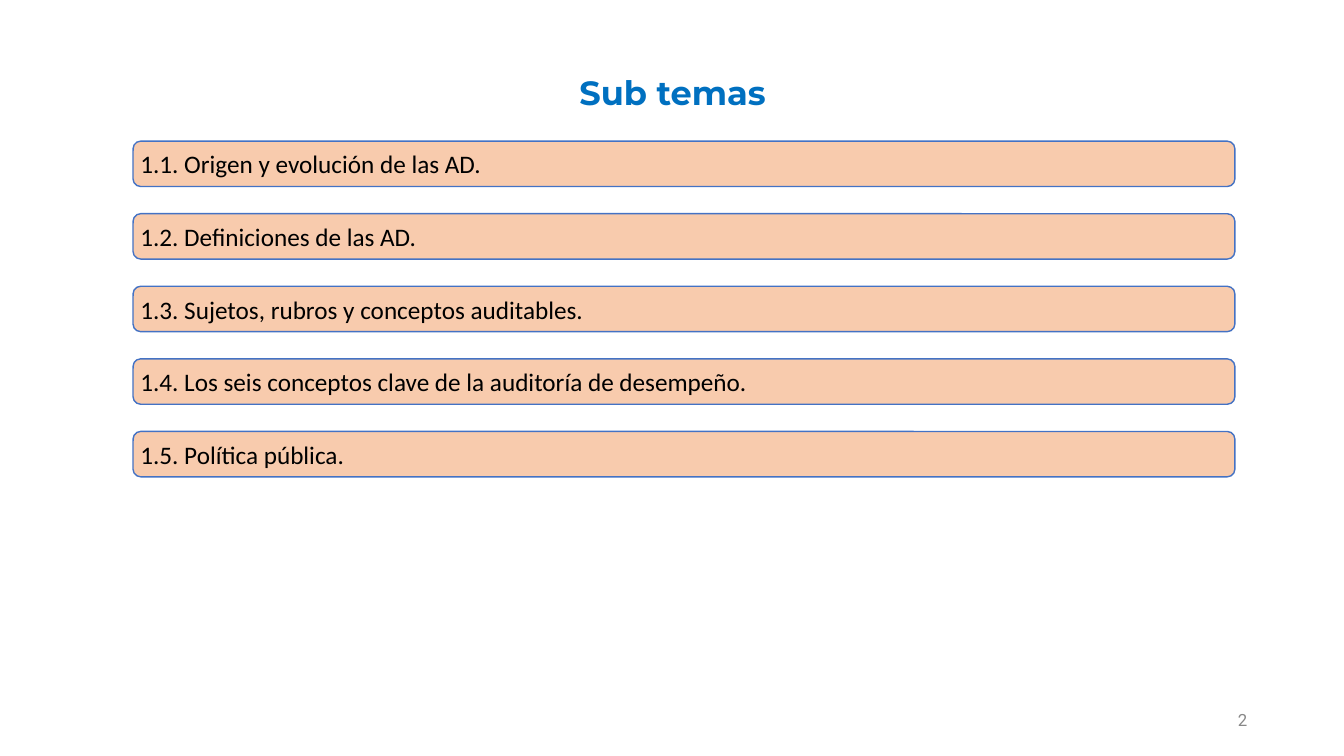
from pptx import Presentation
from pptx.dml.color import RGBColor
from pptx.enum.shapes import MSO_SHAPE
from pptx.enum.text import MSO_ANCHOR, MSO_AUTO_SIZE, PP_ALIGN
from pptx.util import Inches, Pt

BLUE = RGBColor(0x00, 0x70, 0xC0)
OUTLINE = RGBColor(0x44, 0x72, 0xC4)
PEACH = RGBColor(0xF8, 0xCB, 0xAD)
BLACK = RGBColor(0x00, 0x00, 0x00)
GRAY = RGBColor(0x88, 0x88, 0x88)

TOPICS = [
    "1.1. Origen y evolución de las AD.",
    "1.2. Definiciones de las AD.",
    "1.3. Sujetos, rubros y conceptos auditables.",
    "1.4. Los seis conceptos clave de la auditoría de desempeño.",
    "1.5. Política pública.",
]
BAR_LEFT, BAR_TOP, BAR_WIDTH, BAR_HEIGHT, BAR_PITCH = 9.9, 18.67, 81.98, 6, 9.6


class TopicSlide:
    FONTS = {
        "title": {"name": "Montserrat", "size": Pt(24), "bold": True},
        "topic": {"name": "Calibri", "size": Pt(18)},
        "number": {"name": "Roboto", "size": Pt(12)},
    }
    COLORS = {"title": BLUE, "topic": BLACK, "number": GRAY}
    PARAGRAPHS = {
        "title": {"alignment": PP_ALIGN.CENTER, "line_spacing": 0.9},
        "topic": {"alignment": PP_ALIGN.LEFT},
        "number": {"alignment": PP_ALIGN.RIGHT},
    }
    INSETS = {f"margin_{side}": Inches(0.05) for side in ("left", "top", "right", "bottom")}
    MIDDLE = {"vertical_anchor": MSO_ANCHOR.MIDDLE, **INSETS}
    FRAMES = {
        "title": {"word_wrap": True},
        "topic": {"word_wrap": True, **MIDDLE},
        "number": {"word_wrap": False, **MIDDLE},
    }

    def __init__(self, prs):
        self.width, self.height = prs.slide_width, prs.slide_height
        self.shapes = prs.slides.add_slide(prs.slide_layouts[6]).shapes

    def box(self, left, top, width, height):
        return (
            round(self.width * left / 100),
            round(self.height * top / 100),
            round(self.width * width / 100),
            round(self.height * height / 100),
        )

    def style(self, target, values):
        for name, value in values.items():
            setattr(target, name, value)

    def fill_text(self, sp, text, role):
        tf = sp.text_frame
        tf.auto_size = MSO_AUTO_SIZE.SHAPE_TO_FIT_TEXT
        self.style(tf, self.FRAMES[role])
        p = tf.paragraphs[0]
        self.style(p, self.PARAGRAPHS[role])
        r = p.add_run()
        r.text = text
        self.style(r.font, self.FONTS[role])
        r.font.color.rgb = self.COLORS[role]

    def label(self, text, role, *area):
        self.fill_text(self.shapes.add_textbox(*self.box(*area)), text, role)

    def bar(self, text, *area):
        sp = self.shapes.add_shape(MSO_SHAPE.ROUNDED_RECTANGLE, *self.box(*area))
        sp.shadow.inherit = False
        sp.fill.solid()
        sp.fill.fore_color.rgb = PEACH
        sp.line.color.rgb = OUTLINE
        sp.line.width = Pt(1)
        self.fill_text(sp, text, "topic")


def main():
    prs = Presentation()
    prs.slide_width, prs.slide_height = Inches(13.33), Inches(7.5)
    s = TopicSlide(prs)
    s.label("2", "number", 91, 93.33, 2.18, 3.87)
    s.label("Sub temas", "title", 27.16, 9.47, 45.76, 6.13)
    for row, topic in enumerate(TOPICS):
        s.bar(topic, BAR_LEFT, BAR_TOP + row * BAR_PITCH, BAR_WIDTH, BAR_HEIGHT)
    prs.save("out.pptx")


if __name__ == "__main__":
    main()
